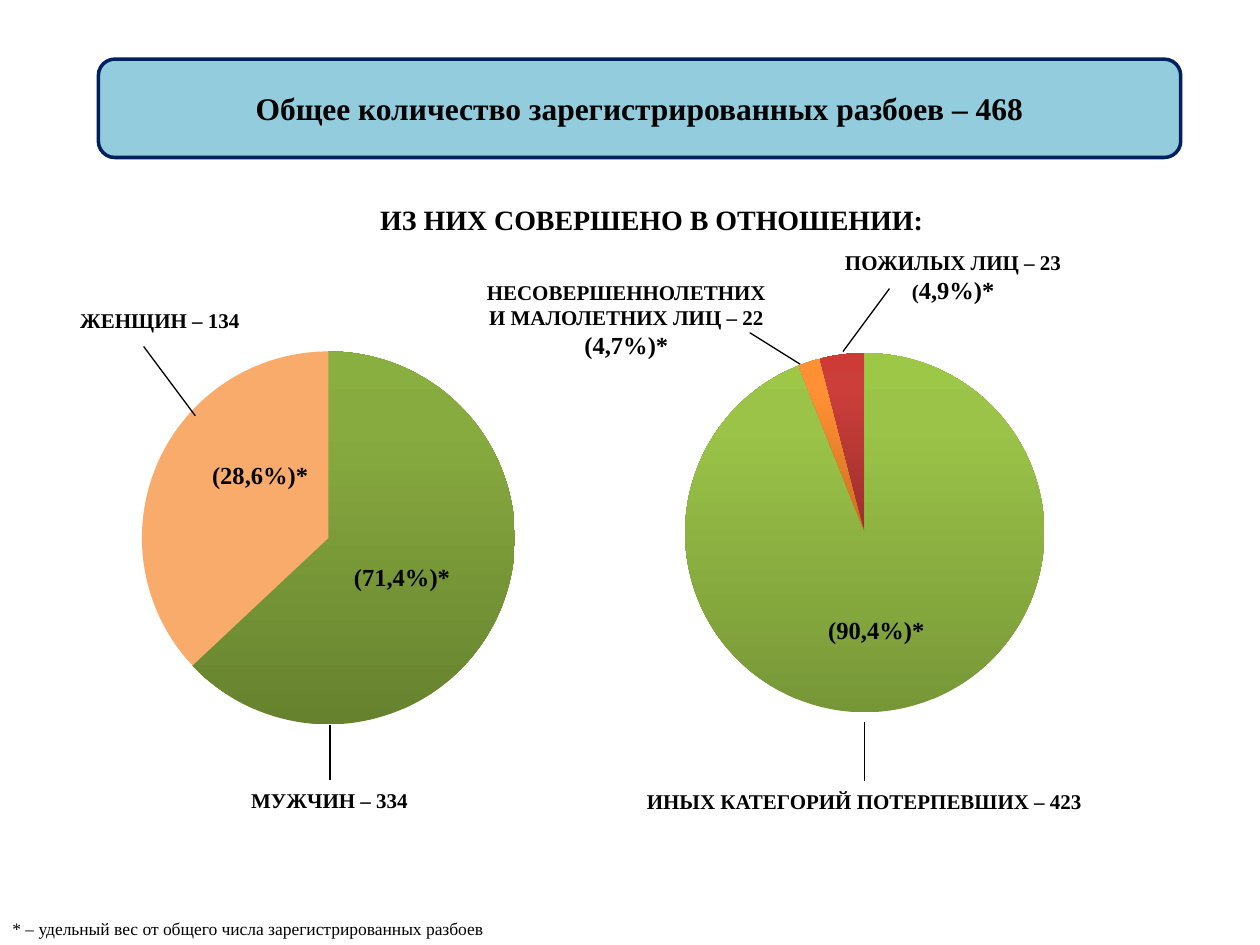
from copy import deepcopy

from lxml.etree import SubElement
from pptx import Presentation
from pptx.chart.data import CategoryChartData
from pptx.dml.color import RGBColor
from pptx.enum.chart import XL_CHART_TYPE
from pptx.enum.shapes import MSO_CONNECTOR, MSO_SHAPE
from pptx.enum.text import MSO_ANCHOR, PP_ALIGN
from pptx.oxml.ns import qn
from pptx.util import Pt


def rgb(value):
    return RGBColor.from_string(value)


def write(para, text, size=12, bold=True, color="000000", font="Times New Roman"):
    span = para.add_run()
    span.text = text
    span.font.size = Pt(size)
    span.font.bold = bold
    span.font.name = font
    span.font.color.rgb = rgb(color)


class SlideBuilder:
    """Holds the style and the current slide, and adds each kind of element."""

    ink = "000000"
    banner_fill = "93CDDD"
    banner_line = "002060"
    chart_font = "Calibri"

    def __init__(self, page):
        self.page = page

    def banner(self, text, left, top, width, height):
        box = self.page.shapes.add_shape(
            MSO_SHAPE.ROUNDED_RECTANGLE, Pt(left), Pt(top), Pt(width), Pt(height))
        box.shadow.inherit = False
        box.fill.solid()
        box.fill.fore_color.rgb = rgb(self.banner_fill)
        box.line.color.rgb = rgb(self.banner_line)
        box.line.width = Pt(2)
        box.text_frame.vertical_anchor = MSO_ANCHOR.MIDDLE
        para = box.text_frame.paragraphs[0]
        para.alignment = PP_ALIGN.CENTER
        write(para, text, size=18, color=self.ink)

    def label(self, lines, left, top, width, height, align=PP_ALIGN.CENTER,
              anchor=MSO_ANCHOR.TOP, wrap=True, bold=True):
        box = self.page.shapes.add_textbox(Pt(left), Pt(top), Pt(width), Pt(height))
        frame = box.text_frame
        frame.word_wrap = wrap
        frame.vertical_anchor = anchor
        for index, spans in enumerate(lines):
            para = frame.add_paragraph() if index else frame.paragraphs[0]
            para.alignment = align
            for text, size in spans:
                write(para, text, size=size, bold=bold, color=self.ink)

    def leader(self, x1, y1, x2, y2):
        line = self.page.shapes.add_connector(
            MSO_CONNECTOR.STRAIGHT, Pt(x1), Pt(y1), Pt(x2), Pt(y2))
        line.line.color.rgb = rgb(self.ink)
        line.line.width = Pt(0.75)
        SubElement(line._element.spPr, qn("a:effectLst"))

    def pie(self, values, fills, frame, plot):
        data = CategoryChartData()
        data.categories = [str(number + 1) for number in range(len(values))]
        data.add_series("Series 1", values)
        chart = self.page.shapes.add_chart(
            XL_CHART_TYPE.PIE, *[Pt(length) for length in frame], data).chart
        chart.has_legend = False
        chart.has_title = False
        chart.font.name = self.chart_font
        chart.font.size = Pt(10)
        chart.font.color.rgb = rgb(self.ink)
        chart.plots[0].vary_by_categories = True
        for index, colors in enumerate(fills):
            look = chart.plots[0].series[0].points[index].format
            look.line.fill.background()
            self.paint(chart, look.fill, colors)
        self.place_plot(chart, plot)

    def paint(self, chart, fill, colors):
        if len(colors) == 1:
            fill.solid()
            fill.fore_color.rgb = rgb(colors[0])
            return
        fill.gradient()
        fill.gradient_angle = 90
        stops = list(chart._chartSpace.iter(qn("a:gsLst")))[-1]
        stops.append(deepcopy(stops[-1]))
        for stop, color, position in zip(fill.gradient_stops, colors, (0, 0.8, 1)):
            stop.color.rgb = rgb(color)
            stop.position = position

    def place_plot(self, chart, plot):
        area = chart._chartSpace.find(".//" + qn("c:plotArea"))
        for old in area.findall(qn("c:layout")):
            area.remove(old)
        layout = SubElement(area, qn("c:layout"))
        area.insert(0, layout)
        manual = SubElement(layout, qn("c:manualLayout"))
        settings = [("layoutTarget", "inner"), ("xMode", "edge"), ("yMode", "edge")]
        for tag, value in settings + list(zip("xywh", plot)):
            SubElement(manual, qn("c:" + tag)).set("val", str(value))


def main():
    deck = Presentation()
    deck.slide_width, deck.slide_height = Pt(720), Pt(540)
    builder = SlideBuilder(deck.slides.add_slide(deck.slide_layouts[6]))

    builder.banner("Общее количество зарегистрированных разбоев – 468", 56.2, 33.8, 618.5, 56.2)
    builder.label([[("ИЗ НИХ СОВЕРШЕНО В ОТНОШЕНИИ:", 16)]], 208, 112.3, 329, 26.6, wrap=False)
    builder.label([[("* – удельный вес от общего числа зарегистрированных разбоев", 10)]],
                  0, 521.3, 298, 18.7, align=PP_ALIGN.LEFT, bold=False)

    builder.pie((63, 37), [("66822E", "88AB40", "8AAF41"), ("F9AB6B",)],
                (30.2, 190.8, 318.2, 233.3), (0.16, 0.04, 0.67, 0.92))
    builder.pie((94, 2, 4),
                [("779737", "9BC348", "9DC746"),
                 ("CC6E20", "FF9034", "FF9136"),
                 ("9C2F2D", "CB3E3A", "CE3B37")],
                (302.4, 130.3, 387.4, 344.9), (0.23, 0.2, 0.53, 0.61))

    builder.label([[("ПОЖИЛЫХ ЛИЦ – 23", 12)], [("(", 12), ("4,9%)*", 14)]],
                  473, 139, 143.3, 38.9)
    builder.label([[("НЕСОВЕРШЕННОЛЕТНИХ", 12)], [("И МАЛОЛЕТНИХ ЛИЦ – 22", 12)],
                   [("(4,7%)*", 14)]], 268.6, 156.2, 178.6, 53.3)

    for text, size, *place in (
            ("(71,4%)*", 14, 194.4, 315.4, 70.6, 28.8),
            ("(28,6%)*", 14, 111.6, 257, 74.2, 28.8),
            ("(90,4%)*", 14, 465.1, 345.6, 71.3, 28.8),
            ("ЖЕНЩИН – 134", 12, 33.8, 172.1, 115.2, 21.6),
            ("МУЖЧИН – 334", 12, 128.2, 446.4, 120.2, 21.6),
            ("ИНЫХ КАТЕГОРИЙ ПОТЕРПЕВШИХ – 423", 12, 340.6, 447.1, 306.7, 21.6)):
        builder.label([[(text, size)]], *place, anchor=MSO_ANCHOR.MIDDLE)

    for ends in ((481.7, 200.9, 508.3, 164.9), (82.1, 198, 111.6, 237.6),
                 (188.6, 414, 188.6, 445.7), (493.9, 412.6, 493.9, 446.4),
                 (428.4, 190.1, 457.2, 208.1)):
        builder.leader(*ends)

    deck.save("out.pptx")


if __name__ == "__main__":
    main()
